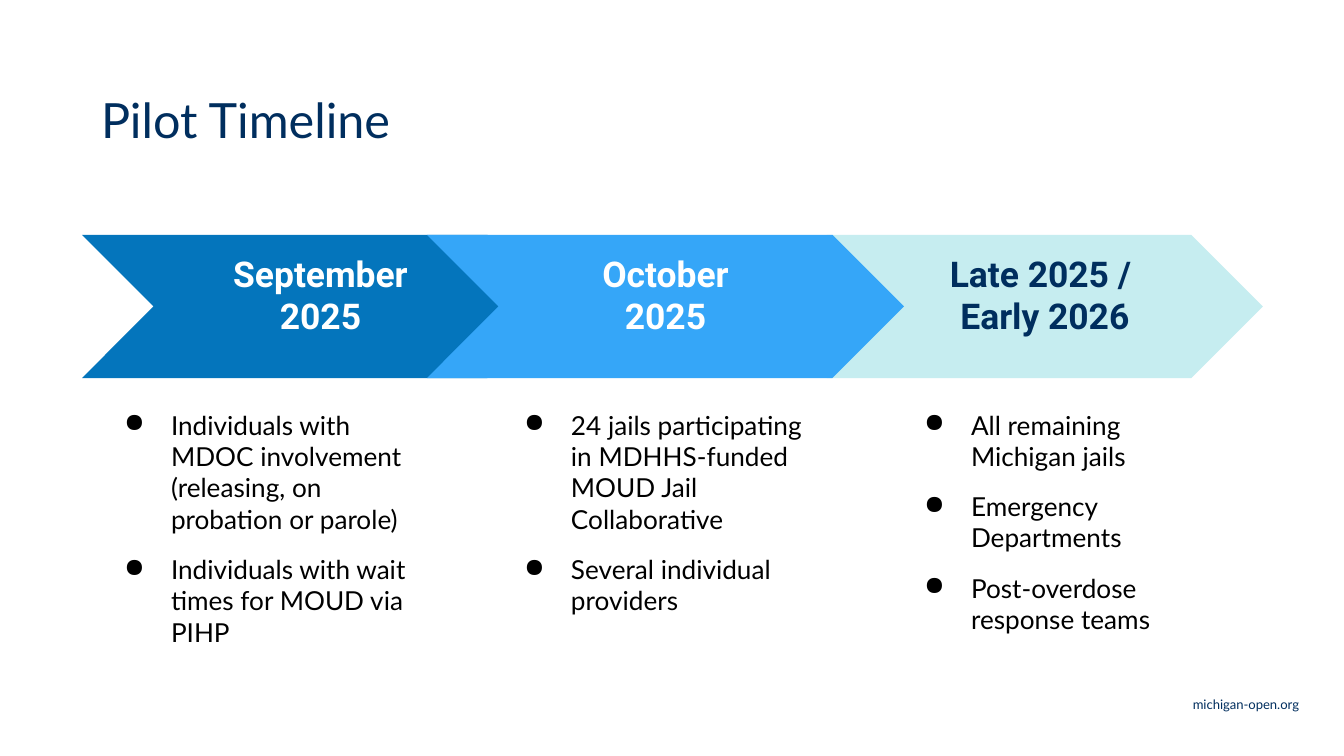
from lxml.etree import SubElement
from pptx import Presentation
from pptx.dml.color import RGBColor
from pptx.enum.shapes import MSO_SHAPE
from pptx.enum.text import MSO_ANCHOR, MSO_AUTO_SIZE, PP_ALIGN
from pptx.oxml.ns import qn
from pptx.util import Emu, Pt

COLORS = {
    "navy": "002E5E",
    "blue": "0475BC",
    "sky": "35A6F8",
    "mint": "C6EDF0",
    "white": "FFFFFF",
    "black": "000000",
}


def px(length):
    return Emu(round(length * 914400 / 134.4))


class TimelineSlide:
    """Style and drawing methods for one timeline slide."""

    body_font = "Lato"
    phase_font = "Roboto"
    inset = 13

    def __init__(self, deck):
        self.slide = deck.slides.add_slide(deck.slide_layouts[5])

    def color(self, name):
        return RGBColor.from_string(COLORS[name])

    def set_font(self, paragraph, name, size, color, bold=False):
        font = paragraph.font
        font.name, font.size, font.bold = name, Pt(size), bold
        font.color.rgb = self.color(color)

    def set_frame(self, frame, side=0, top=0):
        frame.word_wrap = True
        frame.auto_size = MSO_AUTO_SIZE.NONE
        frame.vertical_anchor = MSO_ANCHOR.TOP
        frame.margin_left = frame.margin_right = px(side)
        frame.margin_top = frame.margin_bottom = px(top)

    def title(self, text, left, top, width, height):
        heading = self.slide.shapes.title
        heading.left, heading.top = px(left), px(top)
        heading.width, heading.height = px(width), px(height)
        self.set_frame(heading.text_frame)
        paragraph = heading.text_frame.paragraphs[0]
        paragraph.text = text
        paragraph.alignment = PP_ALIGN.LEFT
        paragraph.line_spacing = 0.8
        self.set_font(paragraph, self.body_font, 26, "navy")

    def footer(self, text, left, top, width, height):
        address = self.slide.shapes.add_textbox(px(left), px(top), px(width), px(height))
        self.set_frame(address.text_frame)
        paragraph = address.text_frame.paragraphs[0]
        paragraph.text = text
        paragraph.alignment = PP_ALIGN.RIGHT
        self.set_font(paragraph, self.body_font, 7, "navy")

    def phase(self, text, left, width, fill, color):
        chevron = self.slide.shapes.add_shape(
            MSO_SHAPE.CHEVRON, px(left), px(235), px(width), px(143))
        chevron.adjustments[0] = 0.5
        chevron.shadow.inherit = False
        chevron.fill.solid()
        chevron.fill.fore_color.rgb = self.color(fill)
        chevron.line.fill.background()
        self.set_frame(chevron.text_frame, self.inset, 17)
        paragraph = chevron.text_frame.paragraphs[0]
        paragraph.text = text
        paragraph.alignment = PP_ALIGN.CENTER
        self.set_font(paragraph, self.phase_font, 19, color, bold=True)

    def bullets(self, items, left):
        column = self.slide.shapes.add_textbox(px(left), px(396), px(335), px(273))
        frame = column.text_frame
        self.set_frame(frame, self.inset, self.inset)
        for index, item in enumerate(items):
            paragraph = frame.add_paragraph() if index else frame.paragraphs[0]
            paragraph.text = item
            if index:
                paragraph.space_before = Pt(10)
            properties = paragraph._p.get_or_add_pPr()
            properties.set("marL", str(px(67)))
            properties.set("indent", str(px(-47)))
            SubElement(properties, qn("a:buChar")).set("char", "●")
            self.set_font(paragraph, self.body_font, 14, "black")


def main():
    deck = Presentation()
    deck.slide_width, deck.slide_height = px(1344), px(756)
    timeline = TimelineSlide(deck)

    timeline.footer("michigan-open.org", 993, 696, 306, 16)
    timeline.title("Pilot Timeline", 101, 101, 1142, 89)

    for phase in (
        ("September\n2025", 82, 477, "blue", "white"),
        ("Late 2025 / \nEarly 2026", 827, 436, "mint", "navy"),
        ("October\n2025", 427, 477, "sky", "white"),
    ):
        timeline.phase(*phase)

    groups = (
        ("Individuals with MDOC involvement (releasing, on probation or parole)",
         "Individuals with wait times for MOUD via PIHP"),
        ("24 jails participating in MDHHS-funded MOUD Jail Collaborative",
         "Several individual providers"),
        ("All remaining Michigan jails",
         "Emergency Departments",
         "Post-overdose response teams"),
    )
    for column, items in enumerate(groups):
        timeline.bullets(items, 91 + 400 * column)

    deck.save("out.pptx")


if __name__ == "__main__":
    main()
